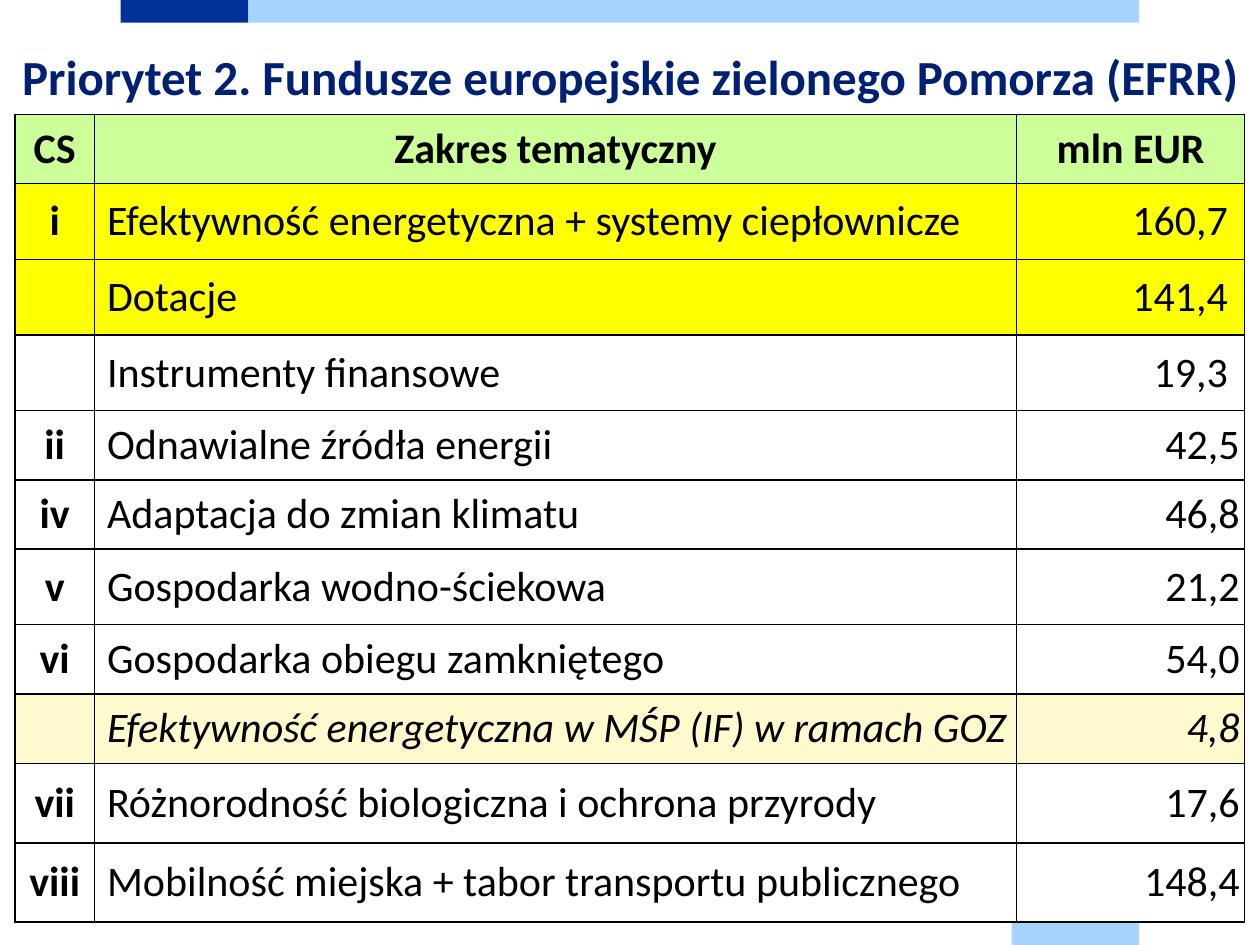
from dataclasses import dataclass

from lxml import etree
from pptx import Presentation
from pptx.dml.color import RGBColor
from pptx.enum.shapes import MSO_SHAPE
from pptx.enum.text import MSO_ANCHOR, PP_ALIGN
from pptx.oxml.ns import qn
from pptx.util import Pt

RECT = MSO_SHAPE.RECTANGLE
MIDDLE = MSO_ANCHOR.MIDDLE
LEFT, CENTER, RIGHT = PP_ALIGN.LEFT, PP_ALIGN.CENTER, PP_ALIGN.RIGHT


@dataclass(frozen=True)
class Theme:
    font: str = "Calibri"
    title_size: int = 28
    cell_size: int = 24
    border_width: int = 1
    title: str = "002073"
    text: str = "000000"
    navy: str = "003399"
    sky: str = "A6D3FF"
    header: str = "CCFF99"
    highlight: str = "FFFF00"
    subtle: str = "FFFACE"


THEME = Theme()
COL_WIDTHS = (45.4, 527, 130.3)
COL_ALIGNS = (CENTER, LEFT, RIGHT)
LOW, MID, TALL = 39.6, 43.2, 45.4
NEAR, FAR = 2.9, 9.6  # right inset of the amounts
HEADER = ("CS", "Zakres tematyczny", "mln EUR")
# objective, scope, amount, row height, fill, amount inset
ROWS = (
    ("i", "Efektywność energetyczna + systemy ciepłownicze", "160,7", MID, THEME.highlight, FAR),
    ("", "Dotacje", "141,4", MID, THEME.highlight, FAR),
    ("", "Instrumenty finansowe", "19,3", MID, None, FAR),
    ("ii", "Odnawialne źródła energii", "42,5", LOW, None, NEAR),
    ("iv", "Adaptacja do zmian klimatu", "46,8", LOW, None, NEAR),
    ("v", "Gospodarka wodno-ściekowa", "21,2", MID, None, NEAR),
    ("vi", "Gospodarka obiegu zamkniętego", "54,0", LOW, None, NEAR),
    ("", "Efektywność energetyczna w MŚP (IF) w ramach GOZ", "4,8", LOW, THEME.subtle, NEAR),
    ("vii", "Różnorodność biologiczna i ochrona przyrody", "17,6", TALL, None, NEAR),
    ("viii", "Mobilność miejska + tabor transportu publicznego", "148,4", TALL, None, NEAR),
)


def style_font(font, size, color, bold=False, italic=False):
    font.name, font.size = THEME.font, Pt(size)
    font.bold, font.italic = bold, italic
    font.color.rgb = RGBColor.from_string(color)


def add_bar(slide, box, color):
    sp = slide.shapes.add_shape(RECT, *map(Pt, box))
    sp.shadow.inherit = False
    sp.fill.solid()
    sp.fill.fore_color.rgb = RGBColor.from_string(color)
    sp.line.fill.background()


def add_title(slide, box, text):
    tf = slide.shapes.add_textbox(*map(Pt, box)).text_frame
    tf.word_wrap = True
    tf.vertical_anchor = MIDDLE
    tf.text = text
    style_font(tf.paragraphs[0].runs[0].font, THEME.title_size, THEME.title, bold=True)


def set_borders(cell):
    """Insert the four edges ahead of the fill, as the schema requires."""
    tc_pr = cell._tc.get_or_add_tcPr()
    for i, edge in enumerate(("lnL", "lnR", "lnT", "lnB")):
        ln = etree.Element(qn(f"a:{edge}"), w=str(Pt(THEME.border_width)))
        fill = etree.SubElement(ln, qn("a:solidFill"))
        etree.SubElement(fill, qn("a:srgbClr"), val=THEME.text)
        tc_pr.insert(i, ln)


def fill_cell(cell, text, align, fill, bold, italic=False, right=0):
    cell.vertical_anchor = MIDDLE
    cell.margin_left = cell.margin_top = cell.margin_bottom = 0
    cell.margin_right = Pt(right)
    if fill:
        cell.fill.solid()
        cell.fill.fore_color.rgb = RGBColor.from_string(fill)
    else:
        cell.fill.background()
    set_borders(cell)
    if not text:
        return
    cell.text = text
    p = cell.text_frame.paragraphs[0]
    p.alignment = align
    if align == LEFT:
        cell.margin_left = Pt(7.2)
    style_font(p.runs[0].font, THEME.cell_size, THEME.text, bold, italic)


def add_budget_table(slide, left, top):
    heights = [LOW] + [row[3] for row in ROWS]
    table = slide.shapes.add_table(
        len(heights), len(COL_WIDTHS), Pt(left), Pt(top),
        Pt(sum(COL_WIDTHS)), Pt(sum(heights))).table
    table.first_row = table.horz_banding = False
    for col, width in zip(table.columns, COL_WIDTHS):
        col.width = Pt(width)
    for row, height in zip(table.rows, heights):
        row.height = Pt(height)

    for c, text in enumerate(HEADER):
        fill_cell(table.cell(0, c), text, CENTER, THEME.header, bold=True)
    for r, (*texts, _, fill, inset) in enumerate(ROWS, 1):
        for c, (text, align) in enumerate(zip(texts, COL_ALIGNS)):
            fill_cell(table.cell(r, c), text, align, fill, bold=c == 0,
                      italic=fill == THEME.subtle,
                      right=inset if align == RIGHT else 0)


def main():
    prs = Presentation()
    prs.slide_width, prs.slide_height = Pt(720), Pt(540)
    slide = prs.slides.add_slide(prs.slide_layouts[6])
    add_bar(slide, (69, 0, 73, 13), THEME.navy)
    add_bar(slide, (142, 0, 509, 13), THEME.sky)
    add_bar(slide, (578, 527, 73, 13), THEME.sky)
    add_title(slide, (5.6, 21, 714.4, 45),
              "Priorytet 2. Fundusze europejskie zielonego Pomorza (EFRR)")
    add_budget_table(slide, 8.6, 65.4)
    prs.save("out.pptx")


if __name__ == "__main__":
    main()
